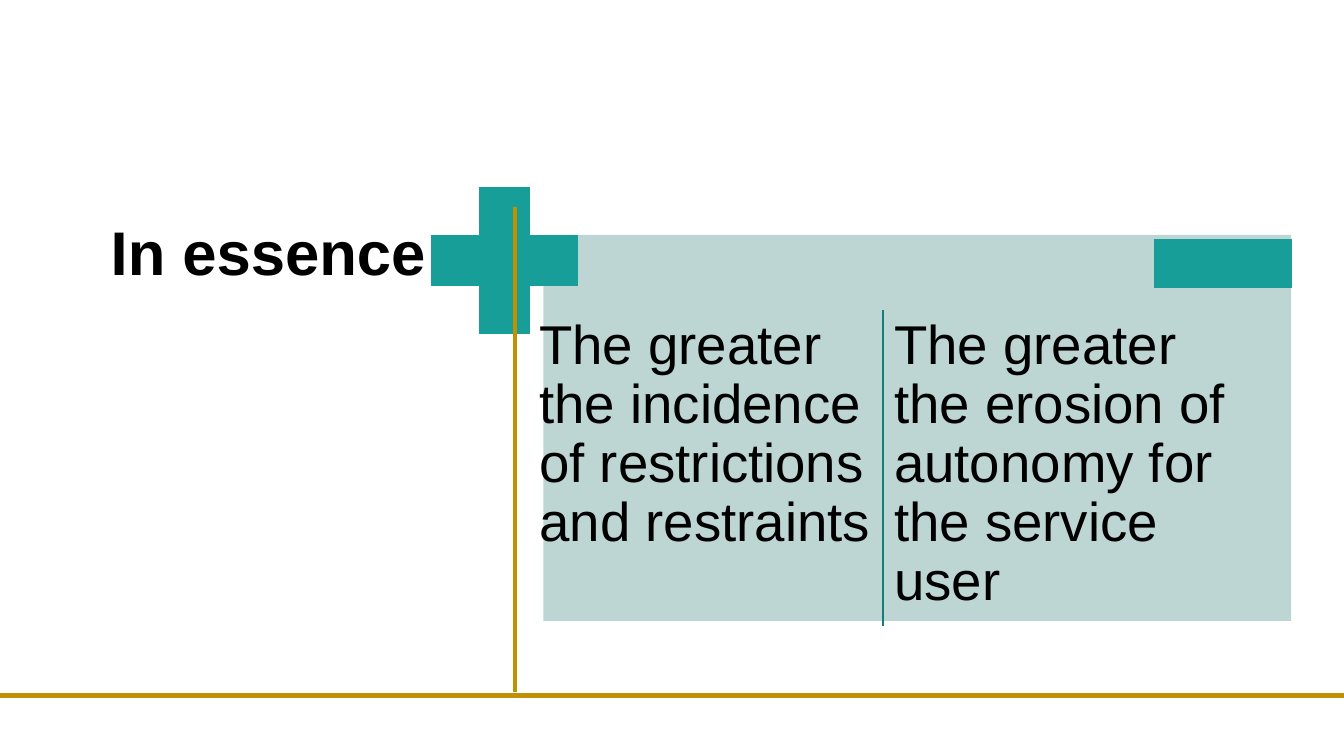
"""Build the "In essence" slide: more restrictions, less autonomy."""
from lxml import etree
from pptx import Presentation, util as u
from pptx.dml.color import RGBColor
from pptx.enum import shapes, text
from pptx.oxml.ns import qn

COLORS = {"panel": "BDD6D4", "teal": "189E99", "divider": "137F7B",
          "gold": "C09102", "text": "000000"}

prs = Presentation()
prs.slide_width, prs.slide_height = u.Inches(13.333), u.Inches(7.5)
s = prs.slides.add_slide(prs.slide_layouts[6])


def place(x, y, w, h):
    """Turn percentages of the slide's width and height into lengths."""
    col, row = prs.slide_width / 100, prs.slide_height / 100
    return [u.Emu(round(v)) for v in (x * col, y * row, w * col, h * row)]


def add_text(area, words, size, bold=False):
    """Add a text box holding one paragraph."""
    sp = s.shapes.add_textbox(*place(*area))
    tf = sp.text_frame
    tf.text = words
    font = tf.paragraphs[0].runs[0].font
    font.name, font.size, font.bold = "Arial", u.Pt(size), bold
    font.color.rgb = RGBColor.from_string(COLORS["text"])
    return tf


title = add_text((7.5, 27.6, 26.78, 11.2), "In essence:", 44, True)
title.word_wrap = False
title.auto_size = text.MSO_AUTO_SIZE.SHAPE_TO_FIT_TEXT

blocks = [
    (shapes.MSO_SHAPE.RECTANGLE, (40.43, 31.07, 55.65, 51.07), "panel"),
    (shapes.MSO_SHAPE.CROSS, (32.1, 24.8, 10.88, 19.33), "teal"),
    (shapes.MSO_SHAPE.RECTANGLE, (85.88, 31.73, 10.2, 6.27), "teal"),
]
for kind, area, color in blocks:
    sp = s.shapes.add_shape(kind, *place(*area))
    sp.shadow.inherit = False
    sp.fill.solid()
    sp.fill.fore_color.rgb = RGBColor.from_string(COLORS[color])
    sp.line.color.rgb = RGBColor.from_string(COLORS[color])
    sp.line.width = u.Pt(0.5)
    if color == "panel":
        sp.line.fill.background()
    if kind == shapes.MSO_SHAPE.CROSS:
        sp.adjustments[0] = 0.33

statements = ["The greater the incidence of restrictions and restraints",
              "The greater the erosion of autonomy for the service user"]
for i, words in enumerate(statements):
    tf = add_text((39.53 + 26.4 * i, 40.93, 25.88, 43.73), words, 39)
    tf.word_wrap = True
    tf.margin_left = tf.margin_right = u.Inches(0.08)
    tf.margin_top = tf.margin_bottom = u.Inches(0.08)
    tf.paragraphs[0].line_spacing = 0.9

rules = [((65.7, 41.07, 0, 41.73), "divider", 1),
         ((38.33, 27.33, 0, 64.27), "gold", 3),
         ((0, 92, 100, 0), "gold", 3)]
for area, color, width in rules:
    x, y, w, h = place(*area)
    line = s.shapes.add_connector(shapes.MSO_CONNECTOR.STRAIGHT, x, y, x + w, y + h)
    line.line.color.rgb = RGBColor.from_string(COLORS[color])
    line.line.width = u.Pt(width)
    etree.SubElement(line._element.spPr, qn("a:effectLst"))

prs.save("out.pptx")
